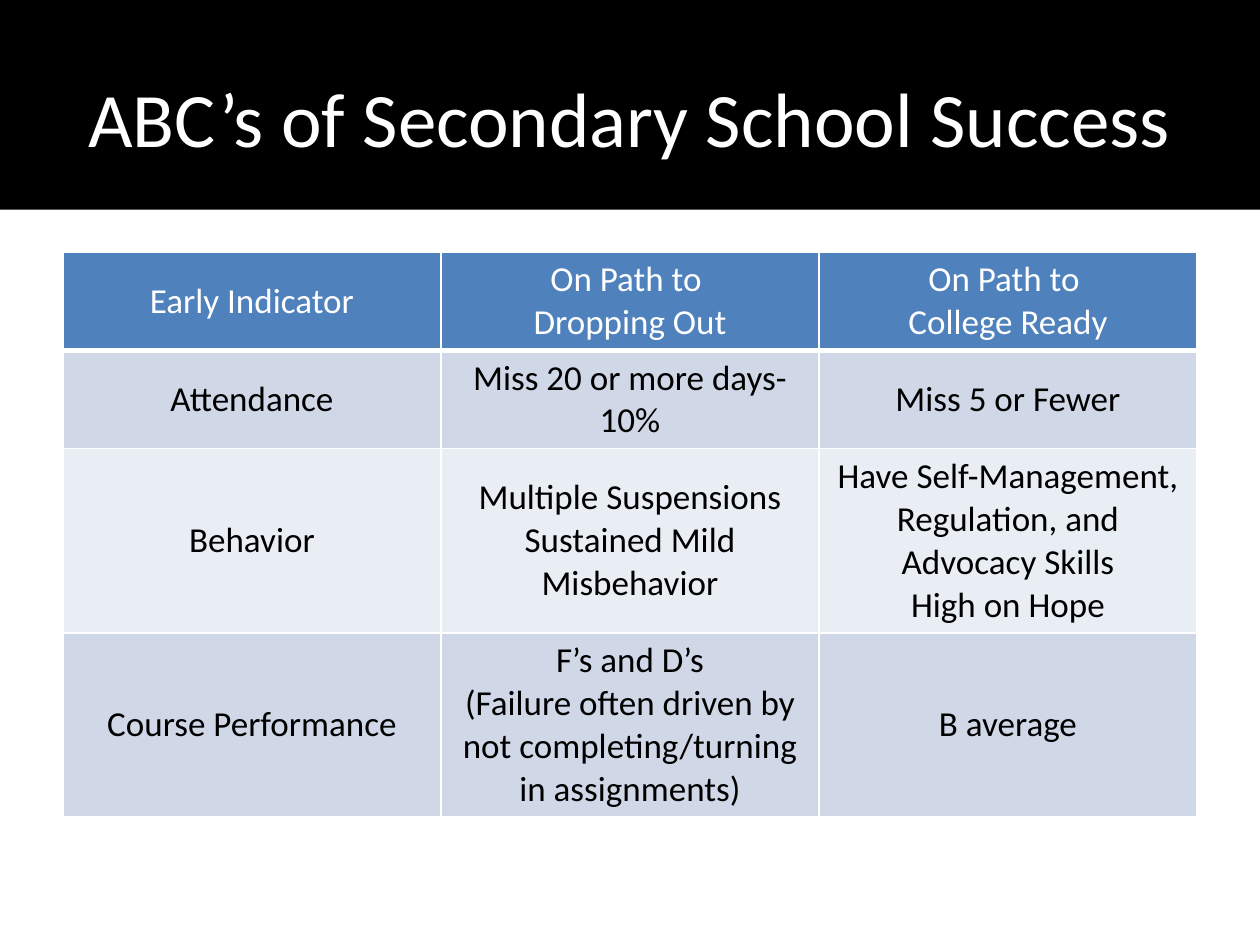
from lxml import etree
from pptx import Presentation
from pptx.dml.color import RGBColor
from pptx.enum.shapes import MSO_SHAPE
from pptx.enum.text import MSO_ANCHOR, PP_ALIGN
from pptx.oxml.ns import qn
from pptx.util import Cm, Pt

RECTANGLE = MSO_SHAPE.RECTANGLE
MIDDLE = MSO_ANCHOR.MIDDLE
CENTER = PP_ALIGN.CENTER
TITLE_ONLY = 5

WHITE, BLACK = "FFFFFF", "000000"
HEADER_FILL = "4F81BD"
BAND_FILLS = ["D0D8E8", "E9EDF4"]
TITLE_FONT = {"name": "Calibri", "size": Pt(44)}
TABLE_FONT = {"name": "Calibri", "size": Pt(20), "bold": False}

INDICATORS = [
    ["Early Indicator", "On Path to \nDropping Out", "On Path to \nCollege Ready"],
    ["Attendance", "Miss 20 or more days- 10%", "Miss 5 or Fewer"],
    ["Behavior", "Multiple Suspensions\nSustained Mild Misbehavior",
     "Have Self-Management, Regulation, and Advocacy Skills\nHigh on Hope"],
    ["Course Performance",
     "F’s and D’s\n(Failure often driven by not completing/turning in assignments)",
     "B average"],
]
ROW_HEIGHTS = [1.98, 1.98, 3.7, 3.7]


def rgb(hex_color):
    return RGBColor.from_string(hex_color)


def format_text(frame, font_values, color):
    for paragraph in frame.paragraphs:
        paragraph.alignment = CENTER
        for run in paragraph.runs:
            for key, value in font_values.items():
                setattr(run.font, key, value)
            run.font.color.rgb = rgb(color)


def add_borders(cell, bottom_width):
    properties = cell._tc.get_or_add_tcPr()
    for side, width in {"L": 1, "R": 1, "T": 1, "B": bottom_width}.items():
        line = etree.SubElement(properties, qn(f"a:ln{side}"), w=str(Pt(width)))
        fill = etree.SubElement(line, qn("a:solidFill"))
        etree.SubElement(fill, qn("a:srgbClr"), val=WHITE)


def add_title_band(slide, left, top, width, height):
    # Black band, kept behind the title
    band = slide.shapes.add_shape(RECTANGLE, left, top, width, height)
    band.shadow.inherit = False
    band.fill.solid()
    band.fill.fore_color.rgb = rgb(BLACK)
    band.line.fill.background()
    slide.shapes.title._element.addprevious(band._element)

    # Title
    title = slide.shapes.title
    title.left, title.top = left + Cm(1.27), top + Cm(0.76)
    title.width, title.height = width - Cm(2.54), Cm(3.18)
    title.text_frame.text = "ABC’s of Secondary School Success"
    title.text_frame.vertical_anchor = MIDDLE
    format_text(title.text_frame, TITLE_FONT, WHITE)


def add_indicator_table(slide, left, top, width):
    height = Cm(sum(ROW_HEIGHTS))
    table = slide.shapes.add_table(len(INDICATORS), len(INDICATORS[0]),
                                   left, top, width, height).table
    for row, row_height in zip(table.rows, ROW_HEIGHTS):
        row.height = Cm(row_height)

    for r, indicator in enumerate(INDICATORS):
        is_header = r == 0
        for c, wording in enumerate(indicator):
            cell = table.cell(r, c)
            cell.text = wording
            cell.vertical_anchor = MIDDLE
            format_text(cell.text_frame, TABLE_FONT, WHITE if is_header else BLACK)
            add_borders(cell, 3 if is_header else 1)
            cell.fill.solid()
            cell.fill.fore_color.rgb = rgb(
                HEADER_FILL if is_header else BAND_FILLS[(r - 1) % 2])


def main():
    presentation = Presentation()
    presentation.slide_width, presentation.slide_height = Cm(25.4), Cm(19.05)
    slide = presentation.slides.add_slide(presentation.slide_layouts[TITLE_ONLY])
    add_title_band(slide, Cm(0), Cm(0), presentation.slide_width, Cm(4.23))
    add_indicator_table(slide, Cm(1.27), Cm(5.08), Cm(22.86))
    presentation.save("out.pptx")


if __name__ == "__main__":
    main()
